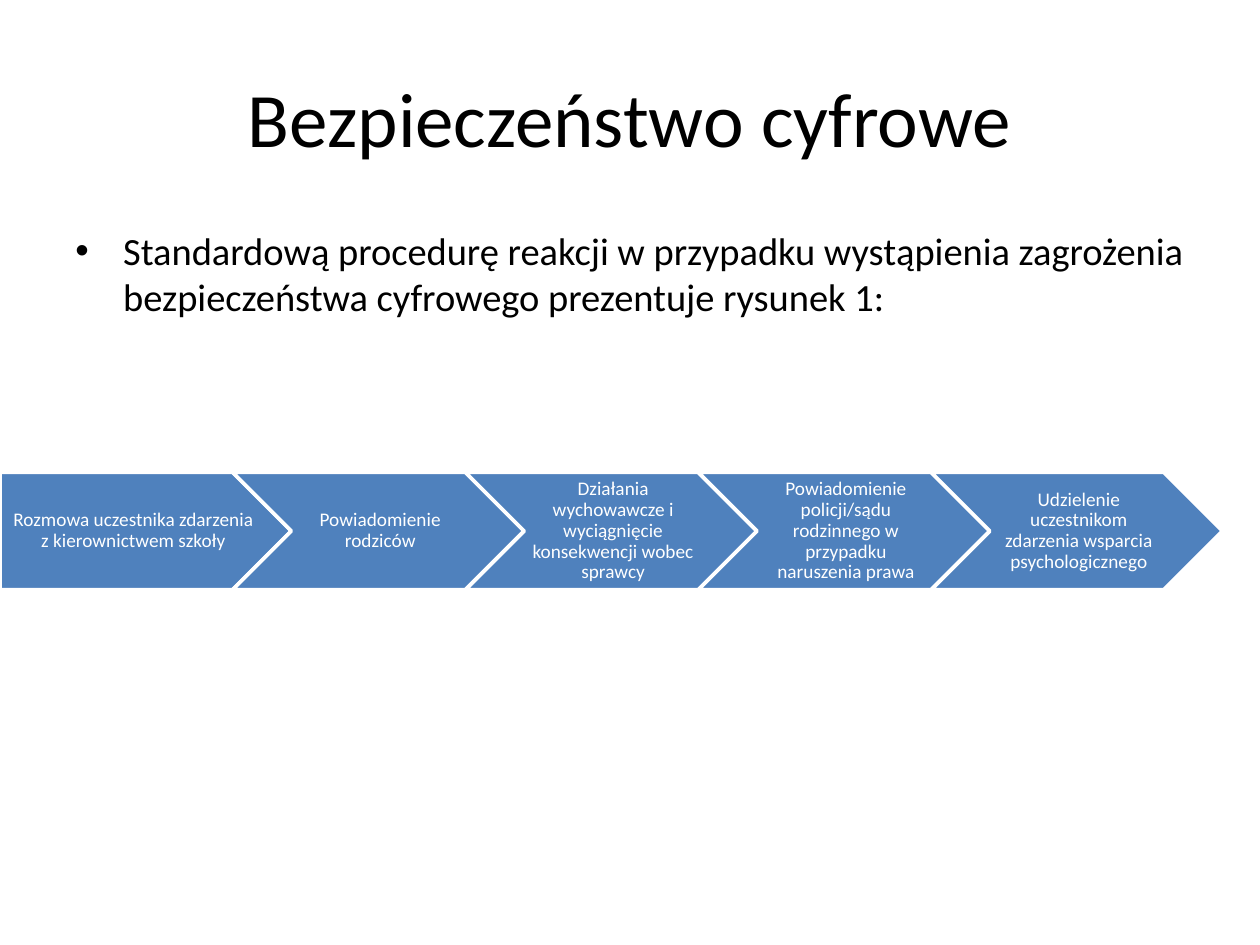
from lxml import etree
from pptx import Presentation
from pptx.dml.color import RGBColor
from pptx.enum.shapes import MSO_SHAPE
from pptx.enum.text import MSO_ANCHOR, PP_ALIGN
from pptx.oxml.ns import qn
from pptx.util import Inches, Pt

CENTER = PP_ALIGN.CENTER
LEFT = PP_ALIGN.LEFT
MIDDLE = MSO_ANCHOR.MIDDLE
TOP = MSO_ANCHOR.TOP
PLATE = MSO_SHAPE.PENTAGON
CHEVRON = MSO_SHAPE.CHEVRON

FONT = "Calibri"
BLACK, WHITE, BLUE = "000000", "FFFFFF", "4F81BD"
STEPS = [
    "Rozmowa uczestnika zdarzenia z kierownictwem szkoły",
    "Powiadomienie rodziców",
    "Działania wychowawcze i wyciągnięcie konsekwencji wobec sprawcy",
    "Powiadomienie policji/sądu rodzinnego w przypadku naruszenia prawa",
    "Udzielenie uczestnikom zdarzenia wsparcia psychologicznego",
]
STEP_TOP, STEP_WIDTH, STEP_HEIGHT = 3.75, 2.31, 0.93
PITCH = 0.8 * STEP_WIDTH  # each step overlaps the one before it by a fifth


def color(code):
    return RGBColor.from_string(code)


class Deck:
    def __init__(self):
        self.prs = Presentation()
        self.prs.slide_width = Inches(10)
        self.prs.slide_height = Inches(7.5)
        self.slide = self.prs.slides.add_slide(self.prs.slide_layouts[6])

    def label(self, shape, text, size, shade, align, anchor):
        frame = shape.text_frame
        frame.word_wrap = True
        frame.vertical_anchor = anchor
        frame.text = text
        para = frame.paragraphs[0]
        para.alignment = align
        font = para.runs[0].font
        font.name, font.size = FONT, Pt(size)
        font.color.rgb = color(shade)
        return para

    def text(self, box, text, size, align=LEFT, anchor=TOP):
        shape = self.slide.shapes.add_textbox(*map(Inches, box))
        return self.label(shape, text, size, BLACK, align, anchor)

    def bullet(self, box, text, size):
        para = self.text(box, text, size)
        para.space_before = Pt(0.2 * size)
        props = para._p.get_or_add_pPr()
        props.set("marL", str(Inches(0.38)))
        props.set("indent", str(-Inches(0.38)))
        etree.SubElement(props, qn("a:buFont")).set("typeface", "Arial")
        etree.SubElement(props, qn("a:buChar")).set("char", "•")

    def step(self, kind, left, text, inset):
        box = (left, STEP_TOP, STEP_WIDTH, STEP_HEIGHT)
        shape = self.slide.shapes.add_shape(kind, *map(Inches, box))
        shape.shadow.inherit = False
        shape.fill.solid()
        shape.fill.fore_color.rgb = color(BLUE)
        shape.line.color.rgb = color(WHITE)
        shape.line.width = Pt(2)
        para = self.label(shape, text, 11, WHITE, CENTER, MIDDLE)
        para.line_spacing = 0.9
        frame = shape.text_frame
        frame.margin_left, frame.margin_right = Inches(inset), Inches(0.02)
        frame.margin_top = frame.margin_bottom = Inches(0.03)


def main():
    deck = Deck()
    deck.text((0.5, 0.3, 9, 1.25), "Bezpieczeństwo cyfrowe", 44, CENTER, MIDDLE)
    deck.bullet(
        (0.5, 1.75, 9, 4.95),
        "Standardową procedurę reakcji w przypadku wystąpienia zagrożenia "
        "bezpieczeństwa cyfrowego prezentuje rysunek 1:",
        22,
    )
    for i, text in enumerate(STEPS):
        kind, inset = (CHEVRON, 0.05) if i else (PLATE, 0.06)
        deck.step(kind, i * PITCH, text, inset)
    deck.prs.save("out.pptx")


if __name__ == "__main__":
    main()
